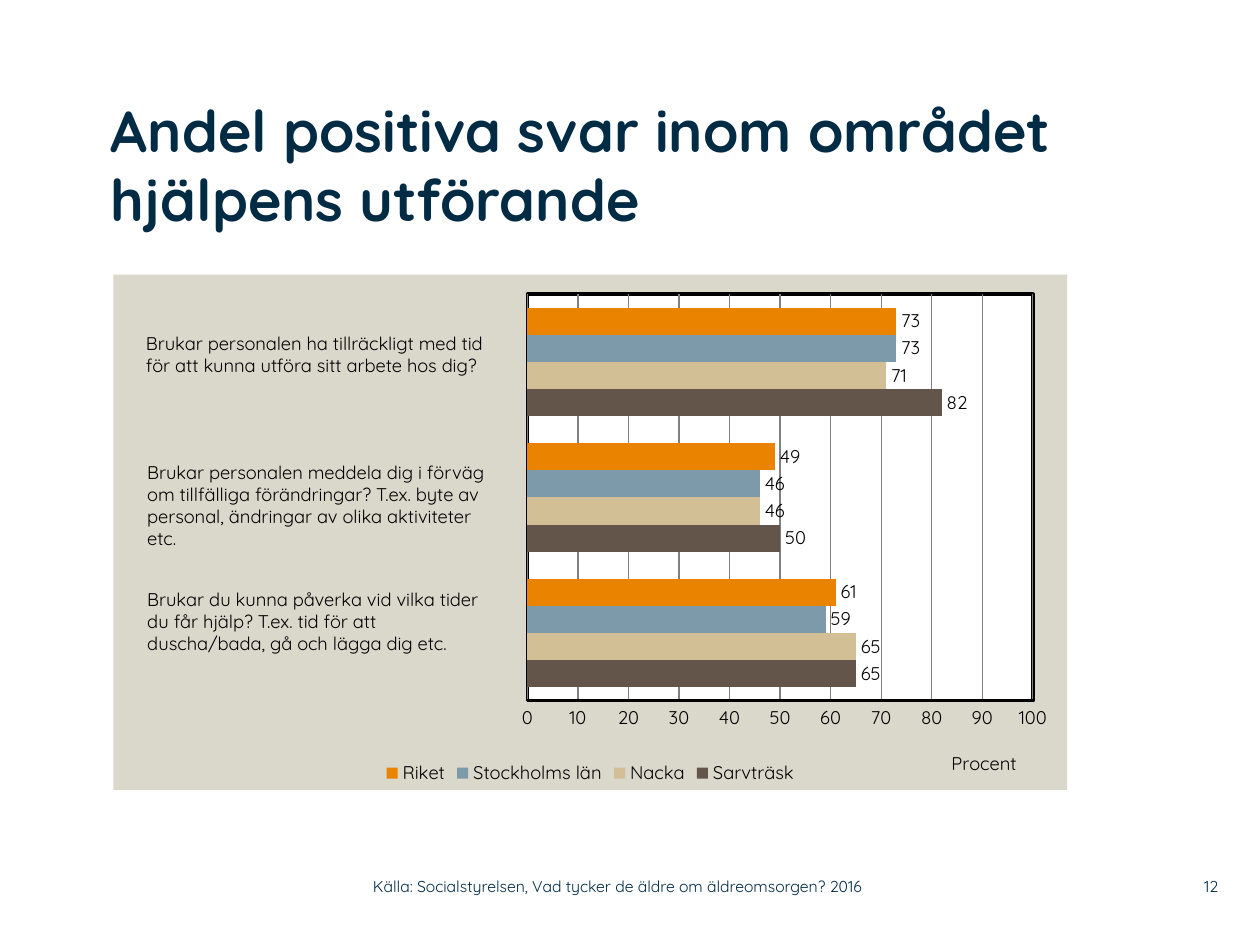
from lxml import etree
from pptx import Presentation
from pptx.chart.data import CategoryChartData
from pptx.dml.color import RGBColor
from pptx.enum import chart as ch, text
from pptx.oxml import parse_xml
from pptx.oxml.ns import nsdecls, qn
from pptx.util import Inches, Pt

FONT = "Quicksand"
NAVY = RGBColor(0x00, 0x2B, 0x45)
BLACK = RGBColor(0, 0, 0)
WHITE = RGBColor(0xFF, 0xFF, 0xFF)
SAND = RGBColor(0xDA, 0xD7, 0xCB)
GRID = RGBColor(0x80, 0x80, 0x80)

TITLE = "Andel positiva svar inom området hjälpens utförande"
SOURCE = "Källa: Socialstyrelsen, Vad tycker de äldre om äldreomsorgen? 2016"
PAGE = "12"
SERIES = [  # name, values from the bottom group up, colour
    ("Sarvträsk", (65, 50, 82), RGBColor(0x63, 0x55, 0x49)),
    ("Nacka", (65, 46, 71), RGBColor(0xD3, 0xBF, 0x96)),
    ("Stockholms län", (59, 46, 73), RGBColor(0x7D, 0x9A, 0xAA)),
    ("Riket", (61, 49, 73), RGBColor(0xE9, 0x83, 0x00)),
]
QUESTIONS = [  # box, lines
    ((1.06, 2.59, 2.99, 0.45),
     ["Brukar personalen ha tillräckligt med tid",
      "för att kunna utföra sitt arbete hos dig?"]),
    ((1.07, 3.61, 2.97, 0.81),
     ["Brukar personalen meddela dig i förväg om tillfälliga förändringar? "
      "T.ex. byte av personal, ändringar av olika aktiviteter etc."]),
    ((1.07, 4.62, 2.97, 0.63),
     ["Brukar du kunna påverka vid vilka tider",
      "du får hjälp? T.ex. tid för att",
      "duscha/bada, gå och lägga dig etc."]),
]
CHART_BOX = (0.9, 2.18, 7.57, 4.09)
PLOT_SHARE = dict(x=0.434, y=0.038, w=0.53, h=0.789)
AXIS_TITLE_SHARE = dict(x=0.875, y=0.915)


def style(font, size, color=BLACK, bold=False):
    font.name, font.size, font.bold = FONT, Pt(size), bold
    font.color.rgb = color


def add_text(slide, box, lines, size, color=BLACK, bold=False, inset=True,
             anchor=text.MSO_ANCHOR.TOP, align=text.PP_ALIGN.LEFT):
    tf = slide.shapes.add_textbox(*map(Inches, box)).text_frame
    tf.word_wrap = True
    tf.vertical_anchor = anchor
    if not inset:
        tf.margin_left = tf.margin_right = tf.margin_top = tf.margin_bottom = 0
    for i, line in enumerate(lines):
        p = tf.paragraphs[0] if i == 0 else tf.add_paragraph()
        p.alignment = align
        r = p.add_run()
        r.text = line
        style(r.font, size, color, bold)


def set_layout(parent, index, shares, inner=False):
    """Place a chart part by shares of the chart's size."""
    old = parent.find(qn("c:layout"))
    if old is not None:
        parent.remove(old)
    layout = parse_xml(f"<c:layout {nsdecls('c')}><c:manualLayout/></c:layout>")
    settings = {"layoutTarget": "inner"} if inner else {}
    settings.update({f"{key}Mode": "edge" for key in "xy"})
    settings.update(shares)
    for key, value in settings.items():
        etree.SubElement(layout[0], qn(f"c:{key}")).set("val", str(value))
    parent.insert(index, layout)


def area_format(fill, line=None, width=0):
    outline = (f'<a:ln w="{Pt(width)}"><a:solidFill><a:srgbClr val="{line}"/>'
               "</a:solidFill></a:ln>" if line else "<a:ln><a:noFill/></a:ln>")
    return parse_xml(f"<c:spPr {nsdecls('c', 'a')}><a:solidFill>"
                     f'<a:srgbClr val="{fill}"/></a:solidFill>{outline}</c:spPr>')


def add_bar_chart(slide):
    data = CategoryChartData()
    data.categories = ["1", "2", "3"]
    for name, values, _ in SERIES:
        data.add_series(name, values)
    chart = slide.shapes.add_chart(ch.XL_CHART_TYPE.BAR_CLUSTERED,
                                   *map(Inches, CHART_BOX), data).chart
    style(chart.font, 10.5)
    chart.has_title = False
    chart.has_legend = True
    chart.legend.position = ch.XL_LEGEND_POSITION.BOTTOM
    chart.legend.include_in_layout = False
    style(chart.legend.font, 10.5)

    plot = chart.plots[0]
    plot.gap_width, plot.overlap, plot.vary_by_categories = 100, 0, False
    for series, (_, _, color) in zip(plot.series, SERIES):
        series.format.fill.solid()
        series.format.fill.fore_color.rgb = color
        labels = series.data_labels
        labels.show_value = True
        labels.position = ch.XL_LABEL_POSITION.OUTSIDE_END
        style(labels.font, 10.5)

    chart.category_axis.visible = False
    axis = chart.value_axis
    axis.minimum_scale, axis.maximum_scale, axis.major_unit = 0, 100, 10
    axis.major_tick_mark = ch.XL_TICK_MARK.NONE
    axis.format.line.color.rgb = BLACK
    axis.format.line.width = Pt(2)
    axis.major_gridlines.format.line.color.rgb = GRID
    axis.major_gridlines.format.line.width = Pt(0.75)
    style(axis.tick_labels.font, 10.5)
    r = axis.axis_title.text_frame.paragraphs[0].add_run()
    r.text = "Procent"
    style(r.font, 10.5)

    root = chart.element
    area = root.find(".//" + qn("c:plotArea"))
    set_layout(area, 0, PLOT_SHARE, inner=True)
    area.append(area_format(WHITE, BLACK, 2))
    set_layout(area.find(".//" + qn("c:title")), 1, AXIS_TITLE_SHARE)
    root.find(qn("c:chart")).addnext(area_format(SAND))


def main():
    prs = Presentation()
    prs.slide_width, prs.slide_height = Inches(10), Inches(7.5)
    slide = prs.slides.add_slide(prs.slide_layouts[6])
    add_bar_chart(slide)
    add_text(slide, (0.88, 0.75, 7.6, 1.42), [TITLE], 33, NAVY, True, inset=False)
    for box, lines in QUESTIONS:
        add_text(slide, box, lines, 10.5)
    footer = dict(size=9, color=NAVY, inset=False, anchor=text.MSO_ANCHOR.MIDDLE)
    add_text(slide, (9.2, 6.89, 0.47, 0.29), [PAGE],
             align=text.PP_ALIGN.RIGHT, **footer)
    add_text(slide, (2.96, 6.89, 4.43, 0.29), [SOURCE], **footer)
    prs.save("out.pptx")


if __name__ == "__main__":
    main()
